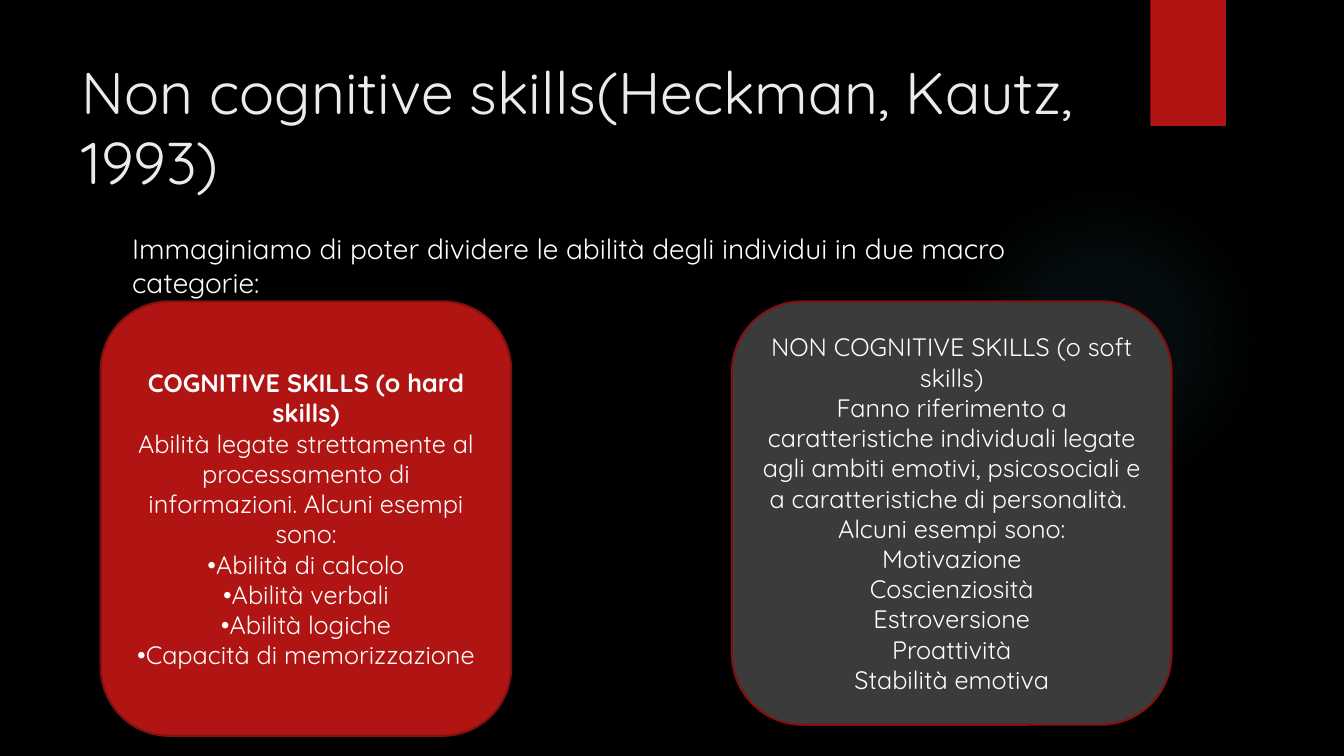
from lxml import etree
from pptx import Presentation
from pptx.dml.color import RGBColor
from pptx.enum.shapes import MSO_SHAPE as Shape
from pptx.enum.text import MSO_ANCHOR as Anchor, MSO_AUTO_SIZE as AutoSize, PP_ALIGN as Align
from pptx.oxml import parse_xml
from pptx.oxml.ns import nsdecls, qn
from pptx.util import Inches, Pt

FONT = "Quicksand"
RED, DARK_RED, GREY = "B01513", "82100E", "3B3B3B"
BLACK, WHITE, OFF_WHITE, TEAL = "000000", "FFFFFF", "EBEBEB", "50B9C1"

COGNITIVE = [
    "COGNITIVE SKILLS (o hard skills)",
    "Abilità legate strettamente al processamento di informazioni. Alcuni esempi sono:",
    "•Abilità di calcolo",
    "•Abilità verbali",
    "•Abilità logiche",
    "•Capacità di memorizzazione",
]
NON_COGNITIVE = [
    "NON COGNITIVE SKILLS (o soft skills)",
    "Fanno riferimento a caratteristiche individuali legate agli ambiti emotivi, "
    "psicosociali e a caratteristiche di personalità. ",
    "Alcuni esempi sono:",
    "Motivazione",
    "Coscienziosità",
    "Estroversione",
    "Proattività",
    "Stabilità emotiva",
]


def paint(color_format, hex_color):
    color_format.rgb = RGBColor.from_string(hex_color)


def style_text(paragraph, size, color, align, bold=False):
    paragraph.alignment = align
    for run in paragraph.runs:
        run.font.name = FONT
        run.font.size = Pt(size)
        run.font.bold = bold
        paint(run.font.color, color)


def add_block(slide, kind, box, fill, outline=None):
    block = slide.shapes.add_shape(kind, *map(Inches, box))
    block.shadow.inherit = False
    block.fill.solid()
    paint(block.fill.fore_color, fill)
    if outline:
        paint(block.line.color, outline)
        block.line.width = Pt(1.5)
    else:
        block.line.fill.background()
    return block


def send_to_back(slide, block):
    slide.shapes._spTree.insert(2, block._element)


def add_glow(slide):
    """Faint teal disc that fades out towards its edge."""
    glow = add_block(slide, Shape.OVAL, (9.41, 1.83, 3.08, 3.08), TEAL)
    stops = "".join(
        f'<a:gs pos="{position * 1000}"><a:srgbClr val="{TEAL}">'
        f'<a:alpha val="{opacity * 1000}"/></a:srgbClr></a:gs>'
        for position, opacity in ((0, 7), (36, 6), (69, 0))
    )
    gradient = parse_xml(
        f'<a:gradFill {nsdecls("a")} rotWithShape="1"><a:gsLst>{stops}</a:gsLst>'
        '<a:path path="circle"><a:fillToRect l="50000" t="50000" r="50000" b="50000"/>'
        "</a:path></a:gradFill>"
    )
    properties = glow._element.spPr
    properties.replace(properties.find(qn("a:solidFill")), gradient)
    send_to_back(slide, glow)


def fill_placeholder(placeholder, box, text, size, color):
    placeholder.left, placeholder.top, placeholder.width, placeholder.height = map(Inches, box)
    frame = placeholder.text_frame
    frame.text = text
    frame.word_wrap = True
    frame.auto_size = AutoSize.NONE
    frame.vertical_anchor = Anchor.TOP
    paragraph = frame.paragraphs[0]
    paragraph.space_before = Pt(0)
    properties = paragraph._p.get_or_add_pPr()
    properties.set("marL", "0")
    properties.set("indent", "0")
    etree.SubElement(properties, qn("a:buNone"))
    style_text(paragraph, size, color, Align.LEFT)


def add_skill_card(slide, box, fill, lines, bold_heading=False):
    card = add_block(slide, Shape.ROUNDED_RECTANGLE, box, fill, DARK_RED)
    frame = card.text_frame
    frame.text = "\n".join(lines)
    frame.word_wrap = True
    frame.vertical_anchor = Anchor.MIDDLE
    for index, paragraph in enumerate(frame.paragraphs):
        style_text(paragraph, 18, WHITE, Align.CENTER, bold_heading and index == 0)


def main():
    deck = Presentation()
    deck.slide_width, deck.slide_height = Inches(13.33), Inches(7.5)
    slide = deck.slides.add_slide(deck.slide_layouts[1])
    slide.background.fill.solid()
    paint(slide.background.fill.fore_color, BLACK)

    ribbon = add_block(slide, Shape.RECTANGLE, (11.41, 0, 0.75, 1.25), RED)
    send_to_back(slide, ribbon)
    add_glow(slide)

    title, intro = slide.placeholders
    fill_placeholder(title, (0.71, 0.5, 10.29, 1.53),
                     "Non cognitive skills(Heckman, Kautz, 1993)", 42, OFF_WHITE)
    fill_placeholder(intro, (1.21, 2.25, 9.78, 4.59),
                     "Immaginiamo di poter dividere le abilità degli individui "
                     "in due macro categorie:", 20, WHITE)

    add_skill_card(slide, (1, 2.99, 4.07, 4.31), RED, COGNITIVE, bold_heading=True)
    add_skill_card(slide, (7.26, 2.99, 4.36, 4.2), GREY, NON_COGNITIVE)
    deck.save("out.pptx")


if __name__ == "__main__":
    main()
